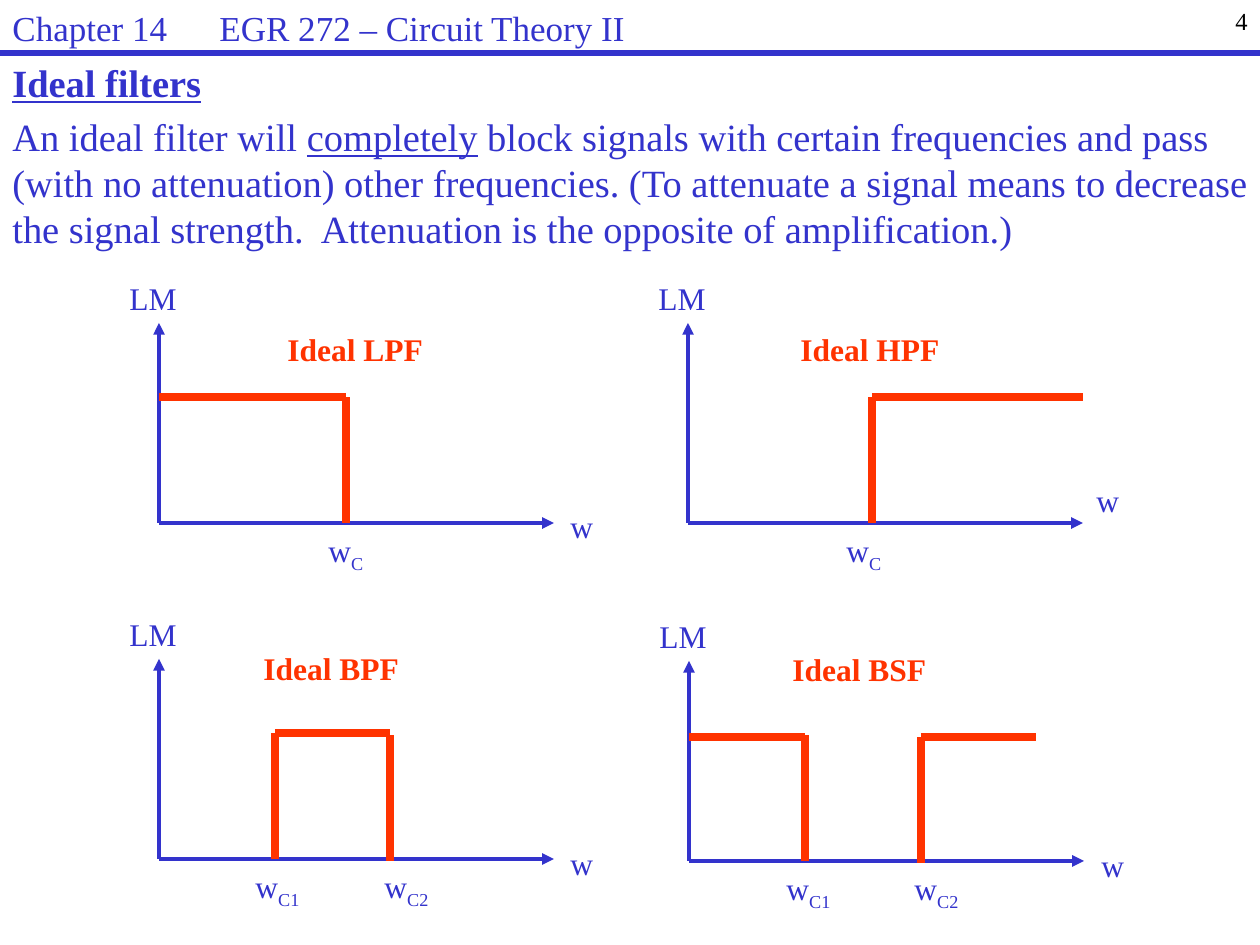
import pptx
import pptx.dml.color
import pptx.enum.shapes
import pptx.enum.text
import pptx.oxml
import pptx.oxml.ns
import pptx.util

BLUE = pptx.dml.color.RGBColor(0x33, 0x33, 0xCC)
ORANGE = pptx.dml.color.RGBColor(0xFF, 0x33, 0x00)
BLACK = pptx.dml.color.RGBColor(0x00, 0x00, 0x00)
FONT = "Times New Roman"
PX_PER_INCH = 126
LABEL_HEIGHT = 50
AXIS_HEIGHT = 200
AXIS_WIDTH = 395
DRAWINGML = pptx.oxml.ns.nsdecls("a")

PLOTS = [
    {"origin": (159, 523), "name": ("Ideal LPF", 116, -199, 161), "omega": (399, -22),
     "response": [(0, -126, 187, -126), (187, 0, 187, -126)],
     "cutoffs": [("C", 157, 62)]},
    {"origin": (688, 523), "name": ("Ideal HPF", 100, -199, 165), "omega": (396, -48),
     "response": [(184, -126, 395, -126), (184, 0, 184, -126)],
     "cutoffs": [("C", 146, 62)]},
    {"origin": (159, 859), "name": ("Ideal BPF", 92, -216, 161), "omega": (399, -21),
     "response": [(116, -126, 231, -126), (116, 0, 116, -126), (231, 2, 231, -124)],
     "cutoffs": [("C1", 84, 73), ("C2", 213, 73)]},
    {"origin": (689, 861), "name": ("Ideal BSF", 91, -217, 159), "omega": (400, -21),
     "response": [(0, -124, 116, -124), (116, 0, 116, -126),
                  (232, 2, 232, -124), (232, -124, 347, -124)],
     "cutoffs": [("C1", 85, 73), ("C2", 213, 73)]},
]


def px(value):
    """Convert pixels to EMU."""
    return pptx.util.Emu(round(value * 914400 / PX_PER_INCH))


def add_line(slide, start, end, color, width, arrow=False):
    """Draw a straight line, with an arrowhead at its end if asked."""
    connector = slide.shapes.add_connector(
        pptx.enum.shapes.MSO_CONNECTOR.STRAIGHT, *map(px, (*start, *end)))
    connector.line.color.rgb = color
    connector.line.width = pptx.util.Pt(width)
    properties = connector._element.spPr
    if arrow:
        properties.find(pptx.oxml.ns.qn("a:ln")).append(
            pptx.oxml.parse_xml(f'<a:tailEnd {DRAWINGML} type="triangle"/>'))
    properties.append(pptx.oxml.parse_xml(f"<a:effectLst {DRAWINGML}/>"))


def add_text_frame(slide, left, top, width, height, wrap=True):
    """Add a text box and return its text frame."""
    text_frame = slide.shapes.add_textbox(*map(px, (left, top, width, height))).text_frame
    text_frame.word_wrap = wrap
    return text_frame


def style_paragraph(paragraph, size, color=BLUE, bold=False):
    """Set the font shared by all runs of a paragraph."""
    paragraph.font.name = FONT
    paragraph.font.size = pptx.util.Pt(size)
    paragraph.font.color.rgb = color
    paragraph.font.bold = bold


def add_label(slide, text, left, top, width, color=BLUE, bold=False, subscript=""):
    """Add a one-line label with an optional subscript."""
    text_frame = add_text_frame(slide, left, top, width, LABEL_HEIGHT, len(subscript) > 1)
    text_frame.auto_size = pptx.enum.text.MSO_AUTO_SIZE.SHAPE_TO_FIT_TEXT
    paragraph = text_frame.paragraphs[0]
    style_paragraph(paragraph, 18, color, bold)
    paragraph.add_run().text = text
    if subscript:
        run = paragraph.add_run()
        run.text = subscript
        run._r.get_or_add_rPr().set("baseline", "-25000")


def add_plot(slide, origin, name, omega, response, cutoffs):
    """Draw the axes, labels and ideal response of one filter."""
    x, y = origin
    add_line(slide, origin, (x, y - AXIS_HEIGHT), BLUE, 2.25, arrow=True)
    add_line(slide, origin, (x + AXIS_WIDTH, y), BLUE, 2.25, arrow=True)
    for x1, y1, x2, y2 in response:
        add_line(slide, (x + x1, y + y1), (x + x2, y + y2), ORANGE, 4.5)
    add_label(slide, "LM", x - 42, y - AXIS_HEIGHT - LABEL_HEIGHT, 73)
    add_label(slide, "w", x + omega[0], y + omega[1], 48)
    for subscript, offset, width in cutoffs:
        add_label(slide, "w", x + offset, y + 2, width, subscript=subscript)
    text, left, top, width = name
    add_label(slide, text, x + left, y + top, width, ORANGE, bold=True)


def add_header(slide):
    """Add the course title, slide number and rule."""
    title = add_text_frame(slide, 0, 0, 924, 42).paragraphs[0]
    title.text = "Chapter 14\tEGR 272 – Circuit Theory II"
    title.space_before = pptx.util.Pt(4)
    style_paragraph(title, 20)
    title._p.get_or_add_pPr().insert_element_before(
        pptx.oxml.parse_xml(
            f'<a:tabLst {DRAWINGML}><a:tab pos="{px(207)}" algn="l"/></a:tabLst>'),
        "a:defRPr", "a:extLst")
    number = add_text_frame(slide, 998, 0, 262, 53).paragraphs[0]
    number.text = "4"
    number.alignment = pptx.enum.text.PP_ALIGN.RIGHT
    style_paragraph(number, 14, BLACK)
    add_line(slide, (0, 53), (1260, 53), BLUE, 3)


def add_body(slide):
    """Add the heading and the definition of an ideal filter."""
    text_frame = add_text_frame(slide, 0, 53, 1260, 210)
    heading = text_frame.paragraphs[0]
    heading.text = "Ideal filters"
    style_paragraph(heading, 22, bold=True)
    heading.font.underline = True
    definition = text_frame.add_paragraph()
    style_paragraph(definition, 22)
    for text, underline in [
        ("An ideal filter will ", False),
        ("completely", True),
        (" block signals with certain frequencies and pass (with no attenuation) "
         "other frequencies. (To attenuate a signal means to decrease the signal "
         "strength.  Attenuation is the opposite of amplification.)", False),
    ]:
        run = definition.add_run()
        run.text = text
        run.font.underline = underline
    for paragraph in text_frame.paragraphs:
        paragraph.space_before = pptx.util.Pt(4.4)


def main():
    """Build the slide on ideal filters."""
    presentation = pptx.Presentation()
    presentation.slide_width = px(1260)
    presentation.slide_height = px(945)
    slide = presentation.slides.add_slide(presentation.slide_layouts[6])
    add_body(slide)
    for plot in PLOTS:
        add_plot(slide, **plot)
    add_header(slide)
    presentation.save("out.pptx")


if __name__ == "__main__":
    main()
